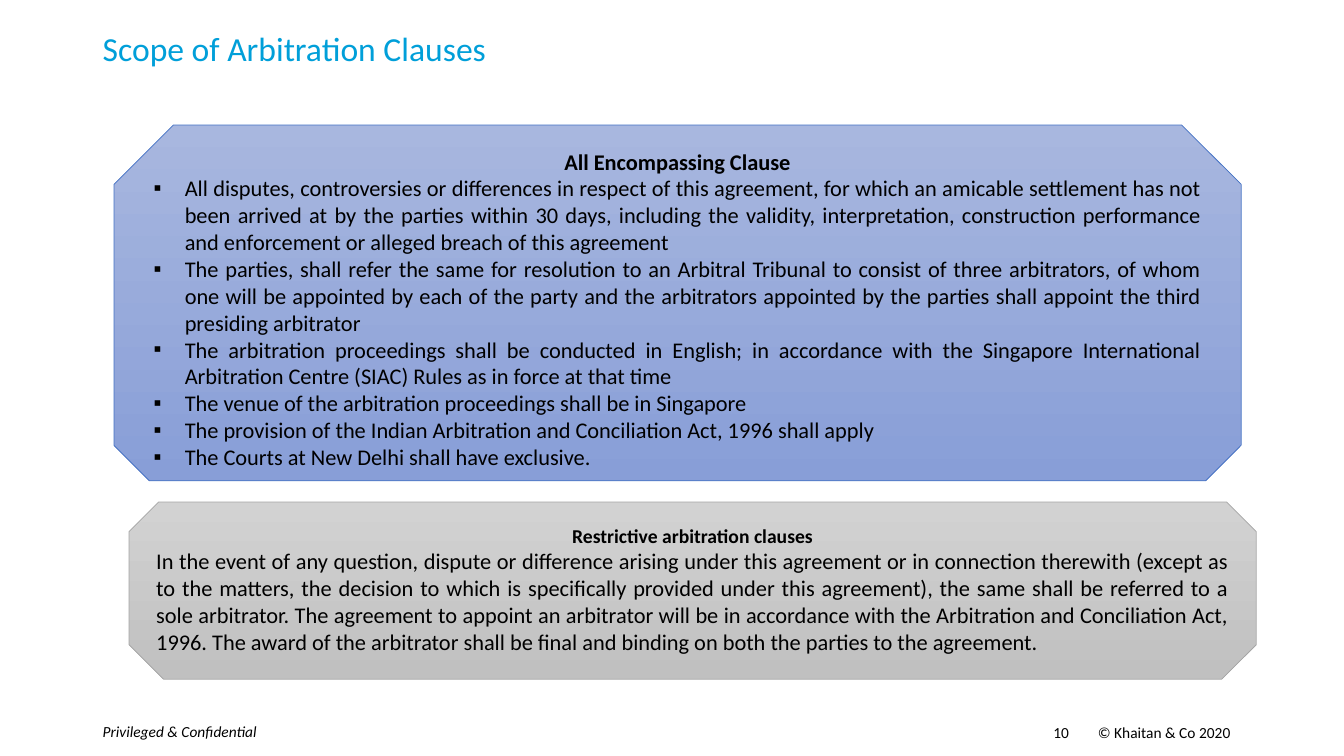
from lxml import etree
from pptx import Presentation
from pptx.dml.color import RGBColor
from pptx.enum import shapes, text
from pptx.oxml.ns import qn
from pptx.util import Inches, Pt

HUES = {"title": "009FD9", "ink": "000000"}
LEFT, MID, RIGHT, JUST = (
    text.PP_ALIGN.LEFT, text.PP_ALIGN.CENTER,
    text.PP_ALIGN.RIGHT, text.PP_ALIGN.JUSTIFY)
SMALL = {"size": 11}

# words, box, align, line spacing, font
LABELS = [
    ("Scope of Arbitration Clauses", (0.92, 0, 10.16, 0.92), LEFT, 1.1,
     {"size": 24, "hue": "title"}),
    ("Privileged & Confidential", (0.92, 7.06, 3, 0.4), LEFT, 1,
     {"size": 11, "italic": True}),
    ("© Khaitan & Co 2020", (10.79, 7.06, 2.02, 0.4), LEFT, 1.1, SMALL),
    ("10", (9.42, 7.06, 1.28, 0.4), RIGHT, 1.1, SMALL),
]

PANELS = [
    {"box": (1.13, 1.24, 11.18, 3.53), "snips": (0.167, 0.1),
     "fade": ("A8B7DF", "889ED7"), "edge": "4472C4",
     "head": "All Encompassing Clause", "size": 16, "mark": "▪",
     "body": [
         "All disputes, controversies or differences in respect of this "
         "agreement, for which an amicable settlement has not been arrived "
         "at by the parties within 30 days, including the validity, "
         "interpretation, construction performance and enforcement or "
         "alleged breach of this agreement",
         "The parties, shall refer the same for resolution to an Arbitral "
         "Tribunal to consist of three arbitrators, of whom one will be "
         "appointed by each of the party and the arbitrators appointed by "
         "the parties shall appoint the third presiding arbitrator",
         "The arbitration proceedings shall be conducted in English; in "
         "accordance with the Singapore International Arbitration Centre "
         "(SIAC) Rules as in force at that time",
         "The venue of the arbitration proceedings shall be in Singapore",
         "The provision of the Indian Arbitration and Conciliation Act, "
         "1996 shall apply",
         "The Courts at New Delhi shall have exclusive.",
     ]},
    {"box": (1.28, 4.98, 11.18, 1.76), "snips": (0.167, 0.195),
     "fade": ("D2D2D2", "C0C0C0"), "edge": "A5A5A5",
     "head": "Restrictive arbitration clauses", "size": 14, "mark": None,
     "body": [
         "In the event of any question, dispute or difference arising under "
         "this agreement or in connection therewith (except as to the "
         "matters, the decision to which is specifically provided under "
         "this agreement), the same shall be referred to a sole arbitrator. "
         "The agreement to appoint an arbitrator will be in accordance with "
         "the Arbitration and Conciliation Act, 1996. The award of the "
         "arbitrator shall be final and binding on both the parties to the "
         "agreement.",
     ]},
]


def style(para, words, align, size, hue="ink", **looks):
    run = para.add_run()
    run.text = words
    para.alignment = align
    looks = {"name": "Calibri", "size": Pt(size), **looks}
    for key, value in looks.items():
        setattr(run.font, key, value)
    run.font.color.rgb = RGBColor.from_string(HUES[hue])


def bullet(para, mark, indent=0.31):
    props = para._p.get_or_add_pPr()
    props.set("marL", str(Inches(indent)))
    props.set("indent", str(Inches(-indent)))
    etree.SubElement(props, qn("a:buFont")).set("typeface", "Arial")
    etree.SubElement(props, qn("a:buChar")).set("char", mark)


def frame(shape):
    body = shape.text_frame
    body.word_wrap = True
    body.vertical_anchor = text.MSO_ANCHOR.MIDDLE
    return body


def label(slide, words, box, align, gap, looks):
    body = frame(slide.shapes.add_textbox(*map(Inches, box)))
    para = body.paragraphs[0]
    para.line_spacing = gap
    style(para, words, align, **looks)


def panel(slide, item):
    shape = slide.shapes.add_shape(
        shapes.MSO_SHAPE.SNIP_2_SAME_RECTANGLE, *map(Inches, item["box"]))
    shape.shadow.inherit = False
    for i, snip in enumerate(item["snips"]):
        shape.adjustments[i] = snip
    shape.fill.gradient()
    shape.fill.gradient_angle = 270  # light at the top
    for stop, tone in zip(shape.fill.gradient_stops, item["fade"]):
        stop.color.rgb = RGBColor.from_string(tone)
    shape.line.color.rgb = RGBColor.from_string(item["edge"])
    shape.line.width = Pt(0.5)

    body = frame(shape)
    style(body.paragraphs[0], item["head"], MID, item["size"], bold=True)
    for words in item["body"]:
        para = body.add_paragraph()
        if item["mark"]:
            bullet(para, item["mark"])
        style(para, words, JUST, 16)


def main():
    deck = Presentation()
    deck.slide_width, deck.slide_height = Inches(13.33), Inches(7.5)
    slide = deck.slides.add_slide(deck.slide_layouts[6])
    for item in LABELS:
        label(slide, *item)
    for item in PANELS:
        panel(slide, item)
    deck.save("out.pptx")


if __name__ == "__main__":
    main()
